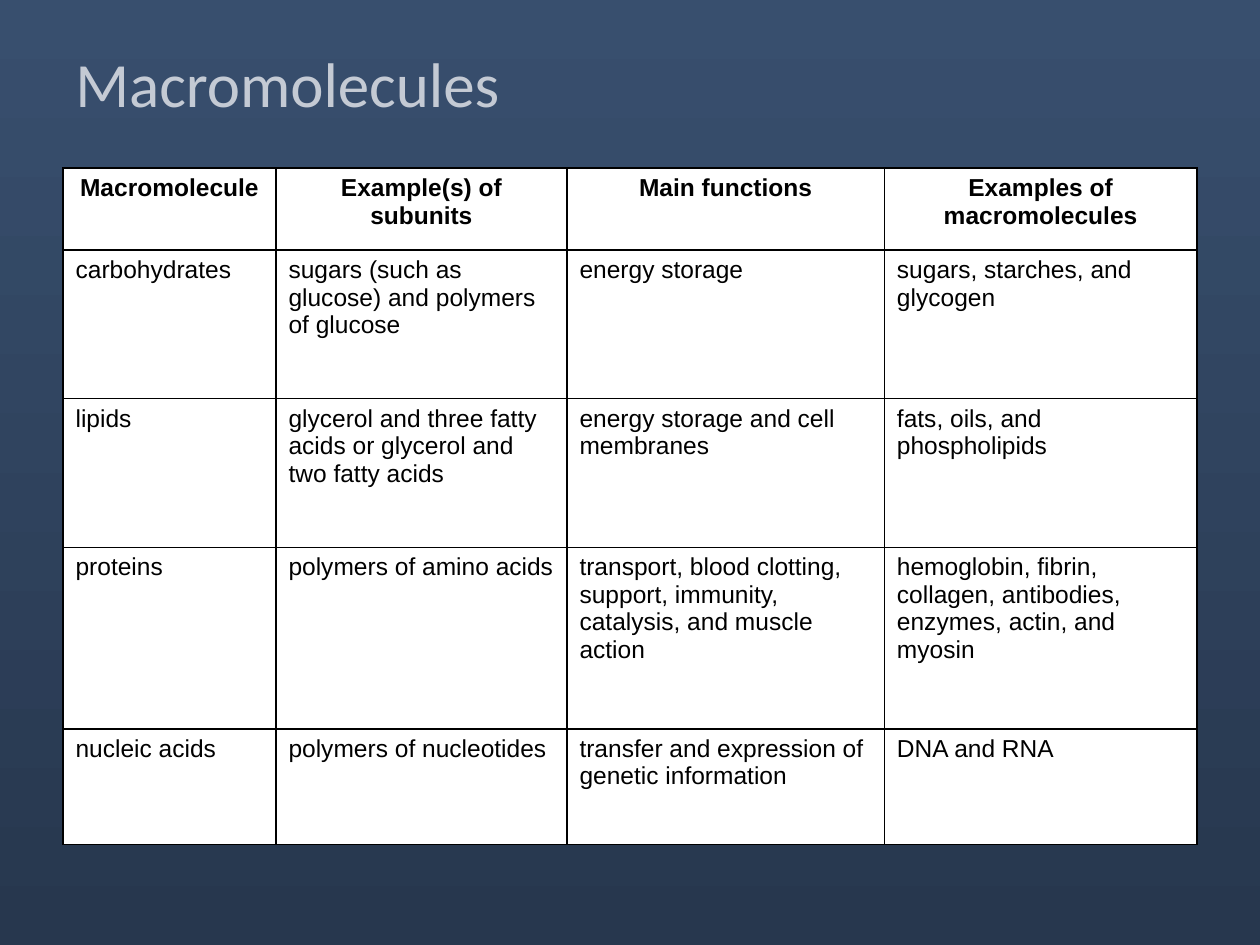
import pptx
import pptx.util
import pptx.dml.color
import pptx.enum.text
import pptx.oxml

Pt = pptx.util.Pt
RGB = pptx.dml.color.RGBColor
ALIGN = pptx.enum.text.PP_ALIGN

NIGHT = RGB(0x38, 0x4F, 0x6E)
DEEP = RGB(0x27, 0x37, 0x4E)
MIST = RGB(0xC4, 0xCA, 0xD4)
WHITE = RGB(0xFF, 0xFF, 0xFF)
BLACK = RGB(0, 0, 0)

TITLE = {"name": "Calibri", "size": Pt(36), "bold": False}
HEAD = {"name": "Arial", "size": Pt(14), "bold": True}
BODY = {**HEAD, "bold": False}

COLS = [121.7, 166.3, 181.4, 178.6]
ROWS = [46.8, 85, 85, 103.7, 66.2]
DATA = [
    ["Macromolecule", "Example(s) of subunits", "Main functions",
     "Examples of macromolecules"],
    ["carbohydrates", "sugars (such as glucose) and polymers of glucose",
     "energy storage", "sugars, starches, and glycogen"],
    ["lipids", "glycerol and three fatty acids or glycerol and two fatty acids",
     "energy storage and cell membranes", "fats, oils, and phospholipids"],
    ["proteins", "polymers of amino acids",
     "transport, blood clotting, support, immunity, catalysis, and muscle action",
     "hemoglobin, fibrin, collagen, antibodies, enzymes, actin, and myosin"],
    ["nucleic acids", "polymers of nucleotides",
     "transfer and expression of genetic information", "DNA and RNA"],
]


def style(font, form, tint):
    for key, value in form.items():
        setattr(font, key, value)
    font.color.rgb = tint


def edge(cell, width):
    """Draw a black line on all four sides of a cell."""
    props = cell._tc.get_or_add_tcPr()
    for spot, side in enumerate(("lnL", "lnR", "lnT", "lnB")):
        props.insert(spot, pptx.oxml.parse_xml(
            f'<a:{side} xmlns:a="http://schemas.openxmlformats.org/drawingml/2006/main"'
            f' w="{Pt(width)}"><a:solidFill><a:srgbClr val="{BLACK}"/></a:solidFill>'
            f'</a:{side}>'))


def paint(slide):
    """Background fading from top to bottom."""
    fill = slide.background.fill
    fill.gradient()
    fill.gradient_angle = 270
    for stop, tint in zip(fill.gradient_stops, (NIGHT, DEEP)):
        stop.color.rgb = tint


def title(slide, left, top, width, height):
    box = slide.shapes.add_textbox(Pt(left), Pt(top), Pt(width), Pt(height))
    frame = box.text_frame
    frame.word_wrap = True
    frame.vertical_anchor = pptx.enum.text.MSO_ANCHOR.BOTTOM
    para = frame.paragraphs[0]
    run = para.add_run()
    run.text = "Macromolecules"
    style(run.font, TITLE, MIST)


def grid(slide, left, top):
    table = slide.shapes.add_table(
        len(ROWS), len(COLS), Pt(left), Pt(top),
        Pt(sum(COLS)), Pt(sum(ROWS))).table
    table.horz_banding = False
    for col, width in zip(table.columns, COLS):
        col.width = Pt(width)
    for row, height, words in zip(table.rows, ROWS, DATA):
        row.height = Pt(height)
        first = words is DATA[0]
        for cell, text in zip(row.cells, words):
            cell.fill.solid()
            cell.fill.fore_color.rgb = WHITE
            edge(cell, 1)
            para = cell.text_frame.paragraphs[0]
            para.alignment = ALIGN.CENTER if first else ALIGN.LEFT
            run = para.add_run()
            run.text = text
            style(run.font, HEAD if first else BODY, BLACK)


def main():
    deck = pptx.Presentation()
    deck.slide_width, deck.slide_height = Pt(720), Pt(540)
    slide = deck.slides.add_slide(deck.slide_layouts[6])
    paint(slide)
    title(slide, 36, 21.6, 648, 50.4)
    grid(slide, 36, 96)
    deck.save("out.pptx")


if __name__ == "__main__":
    main()
